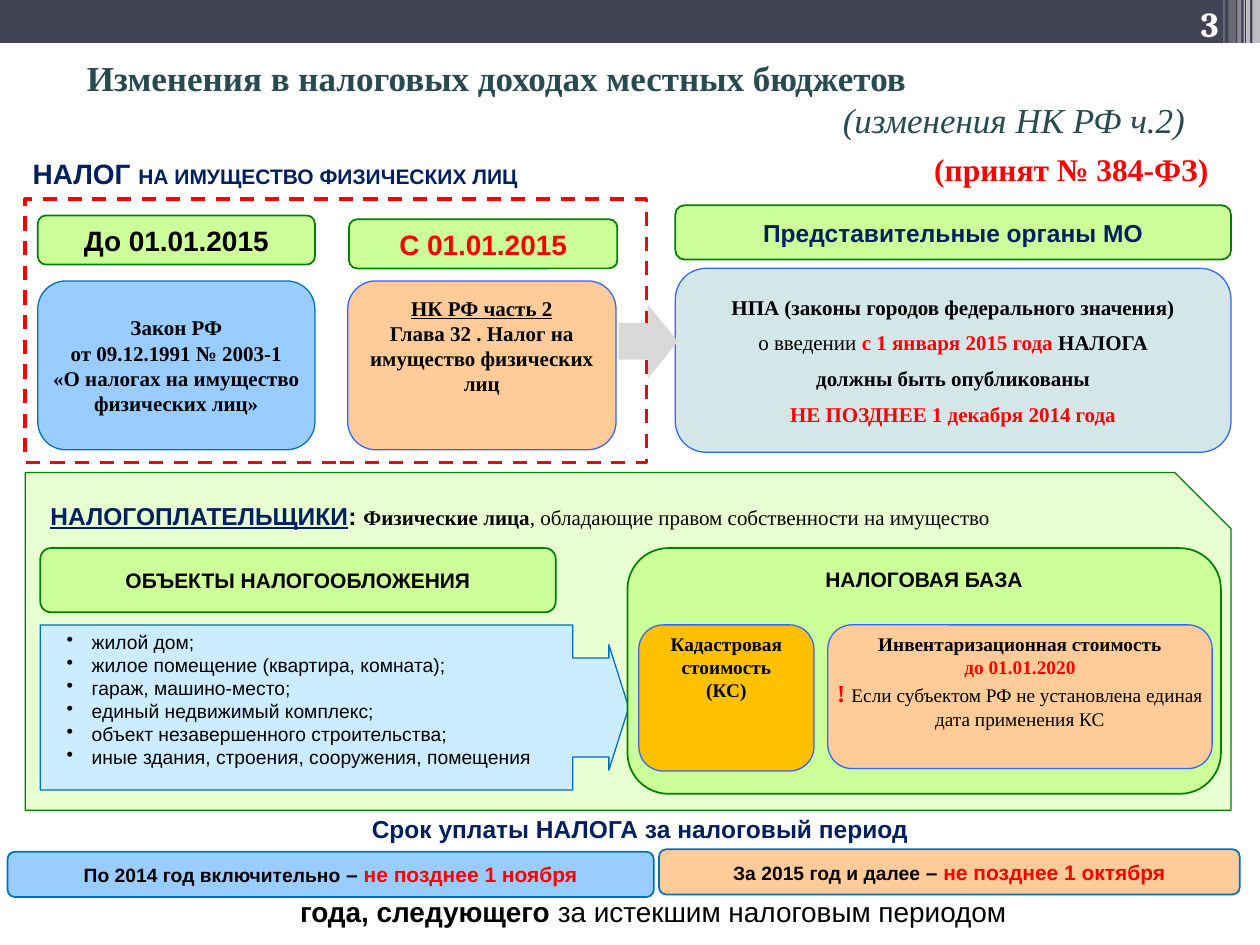
from dataclasses import dataclass
from typing import Optional

from lxml import etree
from pptx import Presentation
from pptx import util as u
from pptx.dml.color import RGBColor
from pptx.enum import dml, shapes, text
from pptx.oxml.ns import qn

ARIAL, TIMES = "Arial", "Times New Roman"
BLACK, WHITE, RED, NAVY, TEAL = "000000", "FFFFFF", "FF0000", "002060", "274B4F"
LIME, GREEN, SKY, BLUE, PEACH, INDIGO = "CCFF99", "008000", "99CCFF", "0070C0", "FFCC99", "3366FF"
ROUND = shapes.MSO_SHAPE.ROUNDED_RECTANGLE
RECT = shapes.MSO_SHAPE.RECTANGLE
TOP, MIDDLE, BOTTOM = text.MSO_ANCHOR.TOP, text.MSO_ANCHOR.MIDDLE, text.MSO_ANCHOR.BOTTOM
LEFT, CENTER, RIGHT = text.PP_ALIGN.LEFT, text.PP_ALIGN.CENTER, text.PP_ALIGN.RIGHT


@dataclass
class Run:
    text: str
    size: float = 12
    font: str = TIMES
    color: str = BLACK
    bold: bool = True
    italic: bool = False
    underline: bool = False


@dataclass
class Para:
    runs: list[Run]
    align: text.PP_ALIGN = CENTER
    after: float = 0
    margin: float = 0
    indent: float = 0
    bullet: str = ""


@dataclass
class Box:
    at: tuple[float, float, float, float]
    paras: list[Para]
    kind: Optional[shapes.MSO_SHAPE] = ROUND
    fill: Optional[str] = None
    line: Optional[str] = None
    weight: float = 1
    anchor: text.MSO_ANCHOR = MIDDLE
    insets: tuple[float, float] = (0.1, 0.05)
    wrap: bool = True
    dashed: bool = False
    adjust: tuple[float, ...] = ()
    opacity: int = 100


def rgb(value: str) -> RGBColor:
    return RGBColor.from_string(value)


def line_of(content: str, *, align=CENTER, after=0, margin=0, indent=0, bullet="", **style) -> Para:
    return Para([Run(content, **style)], align, after, margin, indent, bullet)


def add_para(p, para: Para) -> None:
    p.alignment = para.align
    p.space_after = u.Pt(para.after)
    pPr = p._p.get_or_add_pPr()
    if para.margin:
        pPr.set("marL", str(u.Inches(para.margin)))
        pPr.set("indent", str(u.Inches(para.indent)))
    if para.bullet:
        etree.SubElement(pPr, qn("a:buChar")).set("char", para.bullet)
    for run in para.runs:
        r = p.add_run()
        r.text = run.text
        f = r.font
        f.size, f.name, f.bold = u.Pt(run.size), run.font, run.bold
        f.italic, f.underline = run.italic, run.underline
        f.color.rgb = rgb(run.color)


def draw(s, box: Box) -> None:
    at = [u.Inches(v) for v in box.at]
    if box.kind is None:
        sp = s.shapes.add_textbox(*at)
    else:
        sp = s.shapes.add_shape(box.kind, *at)
        sp.shadow.inherit = False
        for i, value in enumerate(box.adjust):
            sp.adjustments[i] = value
        if box.fill:
            sp.fill.solid()
            sp.fill.fore_color.rgb = rgb(box.fill)
            if box.opacity < 100:
                color = sp._element.spPr.find(qn("a:solidFill"))[0]
                etree.SubElement(color, qn("a:alpha")).set("val", str(box.opacity * 1000))
        else:
            sp.fill.background()
        if box.line:
            sp.line.color.rgb = rgb(box.line)
            sp.line.width = u.Pt(box.weight)
            if box.dashed:
                sp.line.dash_style = dml.MSO_LINE.DASH
        else:
            sp.line.fill.background()
    if not box.paras:
        return
    tf = sp.text_frame
    tf.word_wrap, tf.vertical_anchor = box.wrap, box.anchor
    tf.margin_left = tf.margin_right = u.Inches(box.insets[0])
    tf.margin_top = tf.margin_bottom = u.Inches(box.insets[1])
    for i, para in enumerate(box.paras):
        add_para(tf.paragraphs[0] if i == 0 else tf.add_paragraph(), para)


def label(at, content: str, size: float = 16, color: str = BLACK, **style) -> Box:
    return Box(at, [line_of(content, size=size, font=ARIAL, color=color)], fill=LIME, line=GREEN, **style)


def card(at, paras: list[Para], fill: str, line: str = INDIGO, **style) -> Box:
    return Box(at, paras, fill=fill, line=line, weight=0.75, **style)


def deadline(at, period: str, date: str, fill: str) -> Box:
    runs = [Run(period, 11, ARIAL), Run("– ", 12, ARIAL), Run(date, 12, ARIAL, RED)]
    return Box(at, [Para(runs)], fill=fill, line=BLUE)


def caption(at, paras: list[Para], **style) -> Box:
    return Box(at, paras, kind=None, **{"anchor": TOP, **style})


STRIPES = [(9.94, 0.06, 65), (9.89, 0.03, 65), (9.87, 0.01, 60),
           (9.82, 0.03, 40), (9.75, 0.06, 20), (9.71, 0.01, 30)]
OBJECTS = ["жилой дом;", "жилое помещение (квартира, комната);", "гараж, машино-место;",
           "единый недвижимый комплекс;", "объект незавершенного строительства;",
           "иные здания, строения, сооружения, помещения"]

HEADER = [Box((0, 0, 10, 0.34), [], RECT, "424456")] + [
    Box((x, 0, w, 0.34), [], RECT, WHITE, opacity=o) for x, w, o in STRIPES]

BOXES = [
    card((0.2, 3.75, 9.57, 2.68), [Para([
        Run("НАЛОГОПЛАТЕЛЬЩИКИ", 14, ARIAL, NAVY, underline=True), Run(": ", 14, ARIAL),
        Run("Физические лица"),
        Run(", обладающие правом собственности на имущество", bold=False)], LEFT, margin=0.2)],
        "E8FFD1", GREEN, kind=shapes.MSO_SHAPE.SNIP_1_RECTANGLE, anchor=TOP, insets=(0, 0)),
    card((0.3, 2.23, 2.2, 1.34), [line_of(t) for t in (
        "Закон РФ", "от 09.12.1991 № 2003-1", "«О налогах на имущество физических лиц»")],
        SKY, BLUE, insets=(0, 0.05)),
    caption((0.59, 0.4, 9.25, 0.83), [
        line_of("Изменения в налоговых доходах местных бюджетов", align=LEFT, size=20, color=TEAL),
        line_of("(изменения НК РФ ч.2)", align=LEFT, margin=6, size=20, color=TEAL,
                bold=False, italic=True)]),
    caption((0.22, 1.18, 6.3, 0.37), [Para([
        Run("НАЛОГ ", 16, ARIAL, NAVY),
        Run("НА ИМУЩЕСТВО ФИЗИЧЕСКИХ ЛИЦ", 12, ARIAL, NAVY)], LEFT)], insets=(0.04, 0.06)),
    label((0.3, 1.71, 2.2, 0.39), "До 01.01.2015"),
    label((2.77, 1.74, 2.13, 0.39), "С 01.01.2015", color=RED),
    card((5.36, 2.13, 4.41, 1.46), [
        line_of("НПА (законы городов федерального значения)", after=6),
        Para([Run("о введении ", bold=False), Run("с 1 января 2015 года", color=RED),
              Run(" НАЛОГА")], after=6),
        line_of("должны быть опубликованы", after=6),
        line_of("НЕ ПОЗДНЕЕ 1 декабря 2014 года", after=6, color=RED)],
        "D3E7E9", insets=(0, 0.05)),
    label((5.36, 1.63, 4.41, 0.43), "Представительные органы МО", 14, NAVY),
    Box((0.2, 1.58, 4.93, 2.09), [], RECT, line=RED, weight=2, dashed=True),
    card((2.76, 2.23, 2.13, 1.34), [
        line_of("НК РФ часть 2", underline=True),
        line_of("Глава 32 . Налог на имущество физических лиц")],
        PEACH, anchor=TOP, insets=(0, 0.05)),
    Box((4.91, 2.42, 0.47, 0.58), [], shapes.MSO_SHAPE.RIGHT_ARROW, "D9D9D9"),
    card((0.32, 4.96, 4.67, 1.31), [], "CCECFF", BLUE,
         kind=shapes.MSO_SHAPE.RIGHT_ARROW_CALLOUT, adjust=(0.6, 0.38, 0.12, 0.905)),
    label((0.32, 4.35, 4.09, 0.51), "ОБЪЕКТЫ НАЛОГООБЛОЖЕНИЯ", 12),
    label((4.98, 4.35, 4.71, 1.95), "НАЛОГОВАЯ БАЗА", 12, anchor=TOP),
    caption((0.39, 6.41, 9.38, 0.34), [
        line_of("Срок уплаты НАЛОГА за налоговый период", size=14, font=ARIAL, color=NAVY)]),
    deadline((0.06, 6.76, 5.13, 0.36), "По 2014 год включительно ", "не позднее 1 ноября", SKY),
    deadline((5.23, 6.74, 4.61, 0.36), "За 2015 год и далее ", "не позднее 1 октября", PEACH),
    caption((0.68, 7.05, 9.01, 0.37), [Para([
        Run("года, следующего", 16, ARIAL),
        Run(" за истекшим налоговым периодом", 16, ARIAL, bold=False)])]),
    caption((0.33, 4.95, 4.03, 1.21), [
        line_of(t, align=LEFT, margin=0.3, indent=-0.2, bullet="•", size=11, font=ARIAL, bold=False)
        for t in OBJECTS]),
    card((5.07, 4.96, 1.39, 1.16), [line_of(t, size=11) for t in ("Кадастровая стоимость", "(КС)")],
         "FFC000", anchor=TOP, insets=(0, 0)),
    card((6.57, 4.96, 3.05, 1.14), [
        line_of("Инвентаризационная стоимость", size=11),
        line_of("до 01.01.2020", size=11, color=RED),
        Para([Run("! ", 14, color=RED), Run(
            "Если субъектом РФ не установлена единая дата применения КС", 11, bold=False)])],
        PEACH, anchor=TOP, insets=(0, 0)),
    caption((8.62, 0, 1.15, 0.4), [line_of("3", align=RIGHT, size=20, font="Cambria", color=WHITE)],
            anchor=BOTTOM),
    caption((7.29, 1.14, 2.4, 0.4), [line_of("(принят № 384-ФЗ)", align=RIGHT, size=18, color=RED)],
            wrap=False),
]


def main() -> None:
    prs = Presentation()
    prs.slide_width, prs.slide_height = u.Inches(10), u.Inches(7.5)
    s = prs.slides.add_slide(prs.slide_layouts[6])
    for box in HEADER + BOXES:
        draw(s, box)
    prs.save("out.pptx")


if __name__ == "__main__":
    main()
